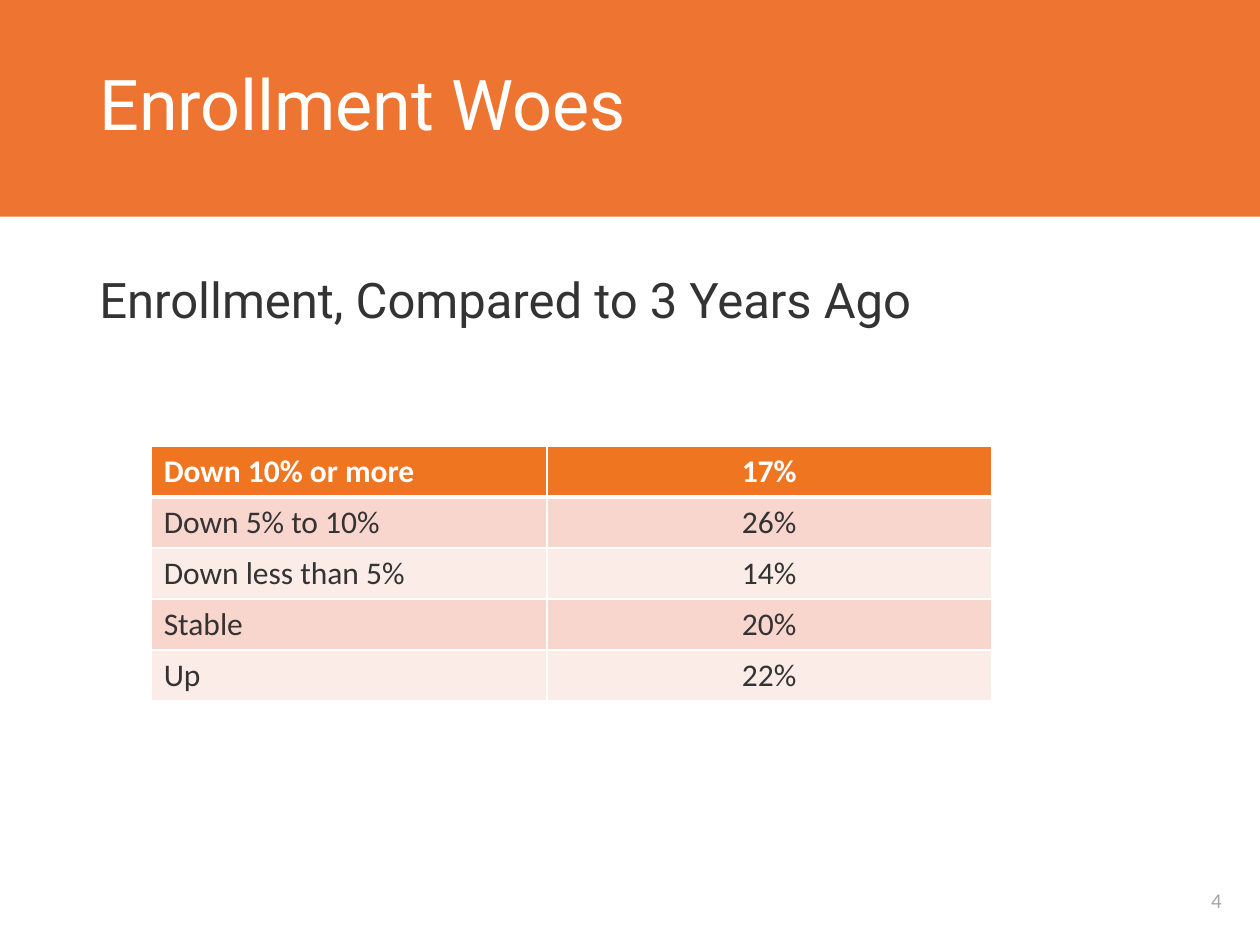
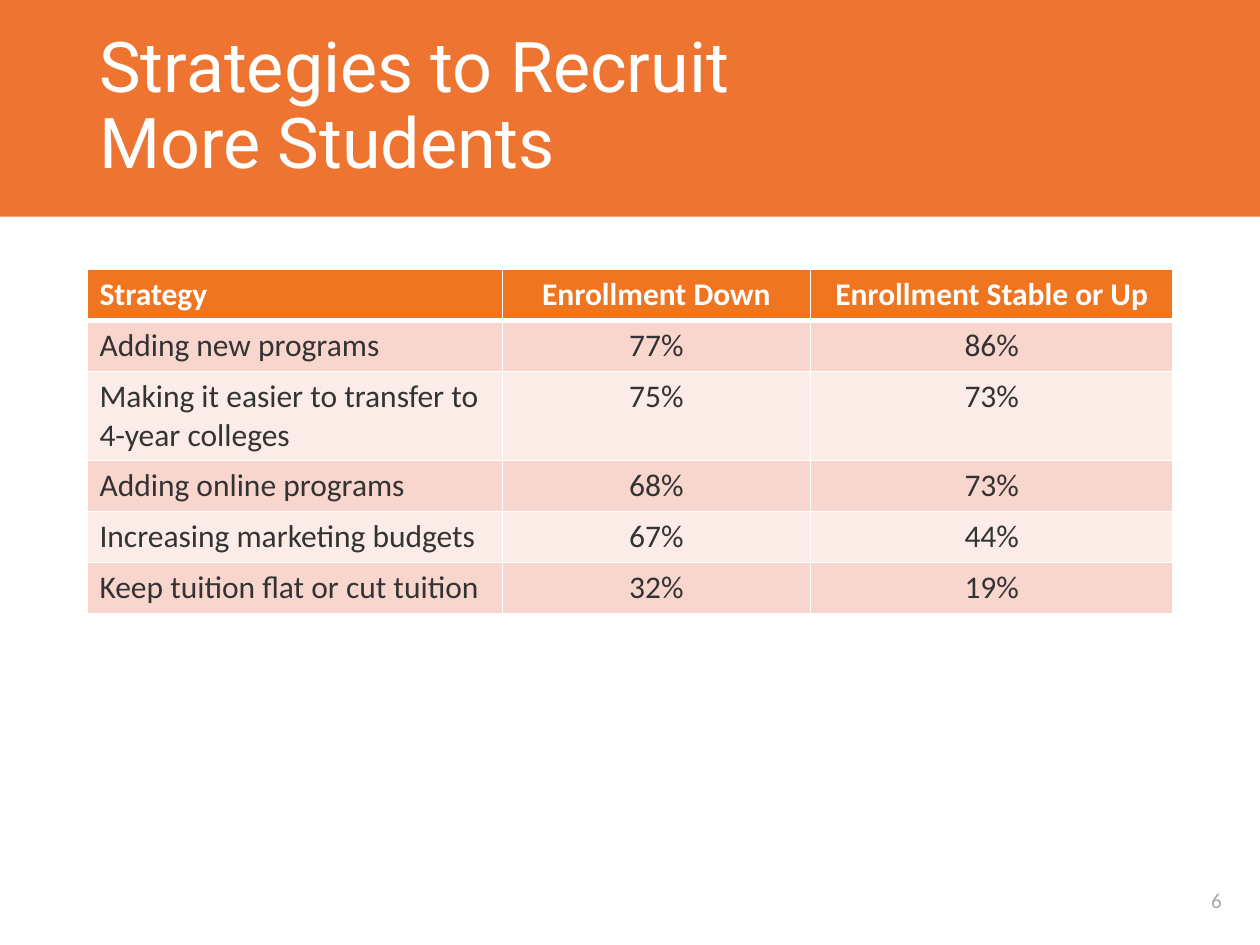
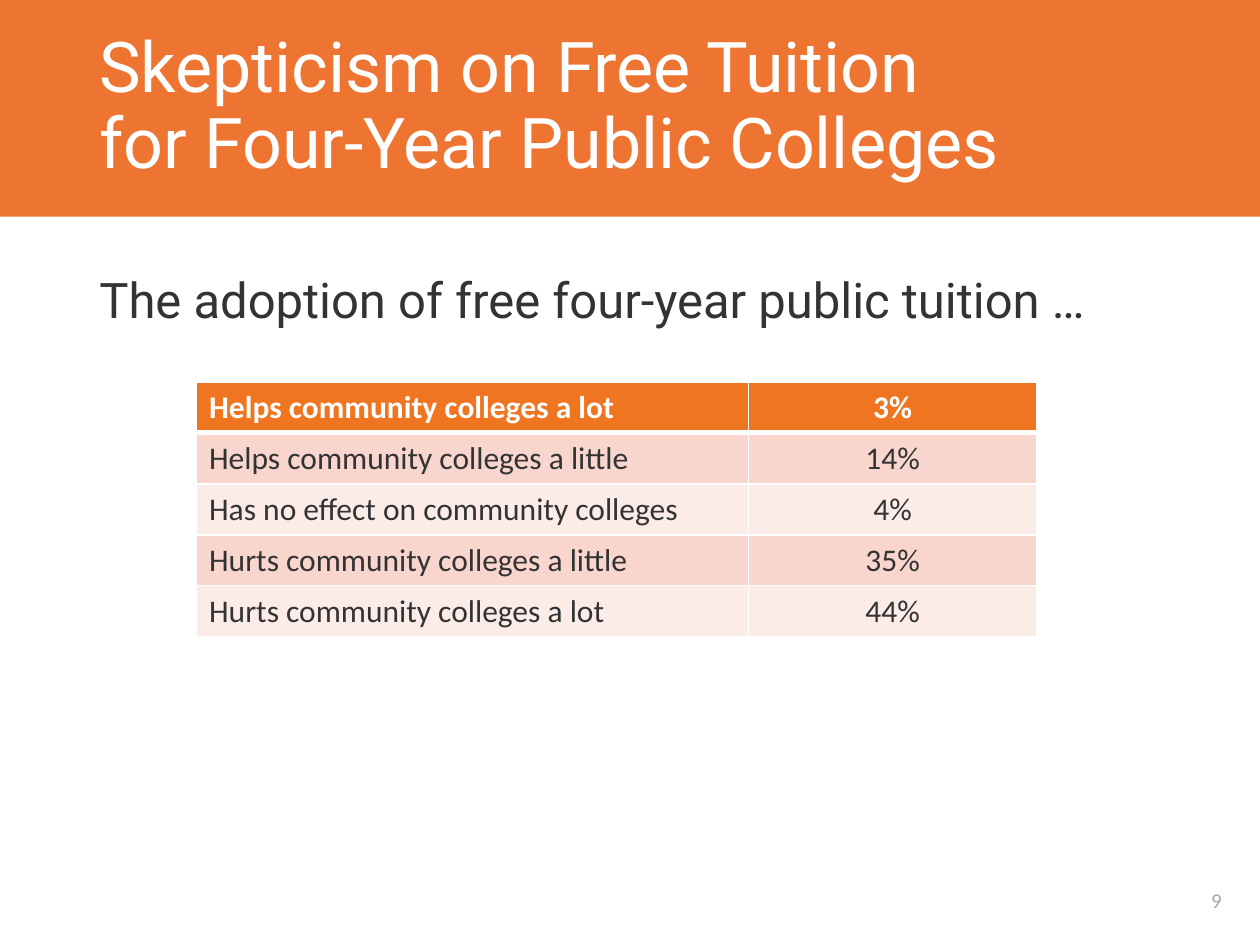
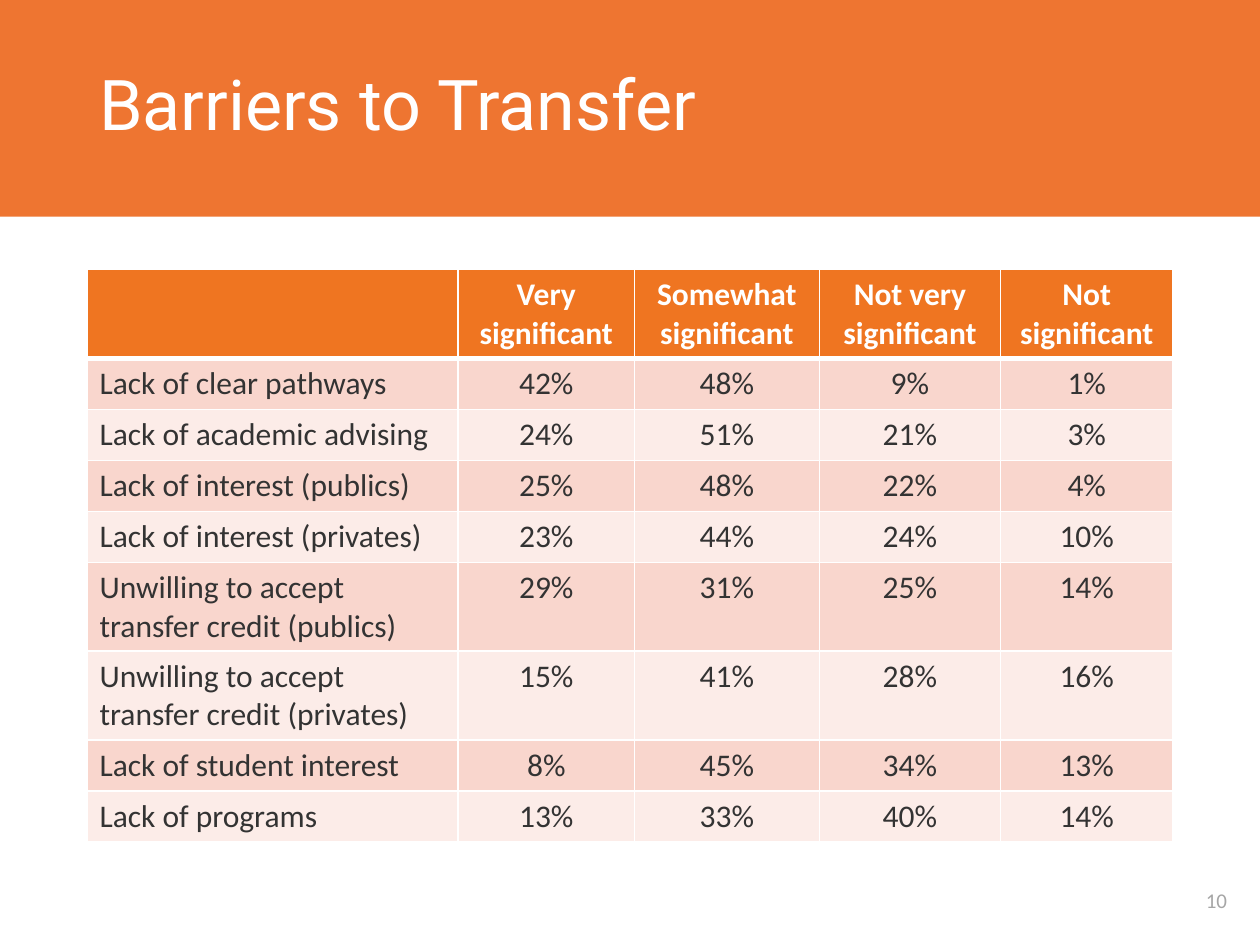
from collections import namedtuple

from lxml.etree import SubElement
from pptx import Presentation
from pptx.dml.color import RGBColor
from pptx.enum.shapes import MSO_SHAPE
from pptx.enum.text import MSO_ANCHOR, PP_ALIGN
from pptx.oxml.ns import qn
from pptx.util import Inches, Pt

# The slide is a grid of 100 columns by 100 rows
WIDTH, HEIGHT = Inches(10), Inches(7.5)
Box = namedtuple("Box", "left top width height")

BAND = Box(-0.1, 0, 100.2, 22.93)
TITLE = Box(6.9, 0, 86.2, 22.8)
BODY = Box(6.9, 28.53, 86.2, 59.6)
PAGE_NUMBER = Box(93.1, 92.67, 6.9, 5.2)
LINE_ROW, TALL_ROW = 5.4, 9.4

WHITE = "FFFFFF"
BAND_FILL, HEADER_FILL = "EE7531", "EF7521"
STRIPES = ("FCECE8", "F9D6CD")
INK = "333333"

# Text styles: font values plus a colour
TITLE_STYLE = ({"name": "Roboto", "size": Pt(40)}, WHITE)
BODY_STYLE = ({"name": "Roboto", "size": Pt(28)}, INK)
NUMBER_STYLE = ({"name": "Calibri", "size": Pt(12)}, "A6A6A6")
HEADER_STYLE = ({"name": "Calibri", "size": Pt(18), "bold": True}, WHITE)
CELL_STYLE = ({"name": "Calibri", "size": Pt(18), "bold": False}, INK)

SLIDES = [
    {
        "number": 4,
        "title": "Enrollment Woes",
        "body": "Enrollment, Compared to 3 Years Ago",
        "box": Box(12, 47.2, 66.7, 27),
        "columns": (31.4, 35.3),
        "rows": [
            ("Down 10% or more", "17%"),
            ("Down 5% to 10%", "26%"),
            ("Down less than 5%", "14%"),
            ("Stable", "20%"),
            ("Up", "22%"),
        ],
    },
    {
        "number": 6,
        "title": "Strategies to Recruit\nMore Students",
        "box": BODY,
        "columns": (33, 24.5, 28.8),
        "tall": (2,),
        "rows": [
            ("Strategy", "Enrollment Down", "Enrollment Stable or Up"),
            ("Adding new programs", "77%", "86%"),
            ("Making it easier to transfer to 4-year colleges", "75%", "73%"),
            ("Adding online programs", "68%", "73%"),
            ("Increasing marketing budgets", "67%", "44%"),
            ("Keep tuition flat or cut tuition", "32%", "19%"),
        ],
    },
    {
        "number": 9,
        "title": "Skepticism on Free Tuition\nfor Four-Year Public Colleges",
        "body": "The adoption of free four-year public tuition …",
        "box": Box(15.6, 40.4, 66.7, 27),
        "columns": (43.8, 22.9),
        "rows": [
            ("Helps community colleges a lot", "3%"),
            ("Helps community colleges a little", "14%"),
            ("Has no effect on community colleges", "4%"),
            ("Hurts community colleges a little", "35%"),
            ("Hurts community colleges a lot", "44%"),
        ],
    },
    {
        "number": 10,
        "title": "Barriers to Transfer",
        "box": BODY,
        "columns": (29.5, 14, 14.7, 14.4, 13.7),
        "tall": (0, 5, 6),
        "rows": [
            ("", "Very significant", "Somewhat significant",
             "Not very significant", "Not significant"),
            ("Lack of clear pathways", "42%", "48%", "9%", "1%"),
            ("Lack of academic advising", "24%", "51%", "21%", "3%"),
            ("Lack of interest (publics)", "25%", "48%", "22%", "4%"),
            ("Lack of interest (privates)", "23%", "44%", "24%", "10%"),
            ("Unwilling to accept transfer credit (publics)", "29%", "31%", "25%", "14%"),
            ("Unwilling to accept transfer credit (privates)", "15%", "41%", "28%", "16%"),
            ("Lack of student interest", "8%", "45%", "34%", "13%"),
            ("Lack of programs", "13%", "33%", "40%", "14%"),
        ],
    },
]


def across(columns):
    return round(WIDTH * columns / 100)


def down(rows):
    return round(HEIGHT * rows / 100)


def place(box):
    return across(box.left), down(box.top), across(box.width), down(box.height)


def paint(color_format, color):
    color_format.rgb = RGBColor.from_string(color)


def fill_with(item, color):
    item.fill.solid()
    paint(item.fill.fore_color, color)


def write(frame, text, style, align=PP_ALIGN.LEFT, spacing=None):
    values, color = style
    para = frame.paragraphs[0]
    para.alignment = align
    para.line_spacing = spacing
    for index, line in enumerate(text.split("\n")):
        if index:
            para.add_line_break()
        span = para.add_run()
        span.text = line
        for name, value in values.items():
            setattr(span.font, name, value)
        paint(span.font.color, color)


def add_text(page, box, text, style, anchor=MSO_ANCHOR.MIDDLE, **layout):
    frame = page.shapes.add_textbox(*place(box)).text_frame
    frame.word_wrap = True
    frame.vertical_anchor = anchor
    write(frame, text, style, **layout)


def add_frame(page, title, number):
    # Title band
    band = page.shapes.add_shape(MSO_SHAPE.RECTANGLE, *place(BAND))
    band.shadow.inherit = False
    fill_with(band, BAND_FILL)
    band.line.fill.background()
    # Page number and title
    add_text(page, PAGE_NUMBER, str(number), NUMBER_STYLE, align=PP_ALIGN.CENTER)
    add_text(page, TITLE, title, TITLE_STYLE, spacing=0.9)


def set_borders(cell, row):
    widths = {"L": 1, "R": 1, "T": 3 if row == 1 else 1, "B": 3 if row == 0 else 1}
    properties = cell._tc.get_or_add_tcPr()
    for side, width in widths.items():
        line = SubElement(properties, qn(f"a:ln{side}"), w=str(Pt(width)))
        SubElement(SubElement(line, qn("a:solidFill")), qn("a:srgbClr"), val=WHITE)


def add_data_table(page, box, columns, rows, tall=()):
    heights = [TALL_ROW if row in tall else LINE_ROW for row in range(len(rows))]
    frame_box = box._replace(height=sum(heights))
    table = page.shapes.add_table(len(rows), len(columns), *place(frame_box)).table
    for column, share in zip(table.columns, columns):
        column.width = across(box.width * share / sum(columns))
    for row, texts in enumerate(rows):
        table.rows[row].height = down(heights[row])
        for column, text in enumerate(texts):
            cell = table.cell(row, column)
            set_borders(cell, row)
            fill_with(cell, STRIPES[row % 2] if row else HEADER_FILL)
            if text:
                write(cell.text_frame, text, CELL_STYLE if row else HEADER_STYLE,
                      PP_ALIGN.CENTER if column else PP_ALIGN.LEFT)


def add_table_slide(deck, number, title, box, columns, rows, body=None, tall=()):
    page = deck.slides.add_slide(deck.slide_layouts[6])
    add_frame(page, title, number)
    if body:
        add_text(page, BODY, body, BODY_STYLE, MSO_ANCHOR.TOP, spacing=0.9)
    add_data_table(page, box, columns, rows, tall)


def main():
    deck = Presentation()
    deck.slide_width, deck.slide_height = WIDTH, HEIGHT
    for content in SLIDES:
        add_table_slide(deck, **content)
    deck.save("out.pptx")


if __name__ == "__main__":
    main()
